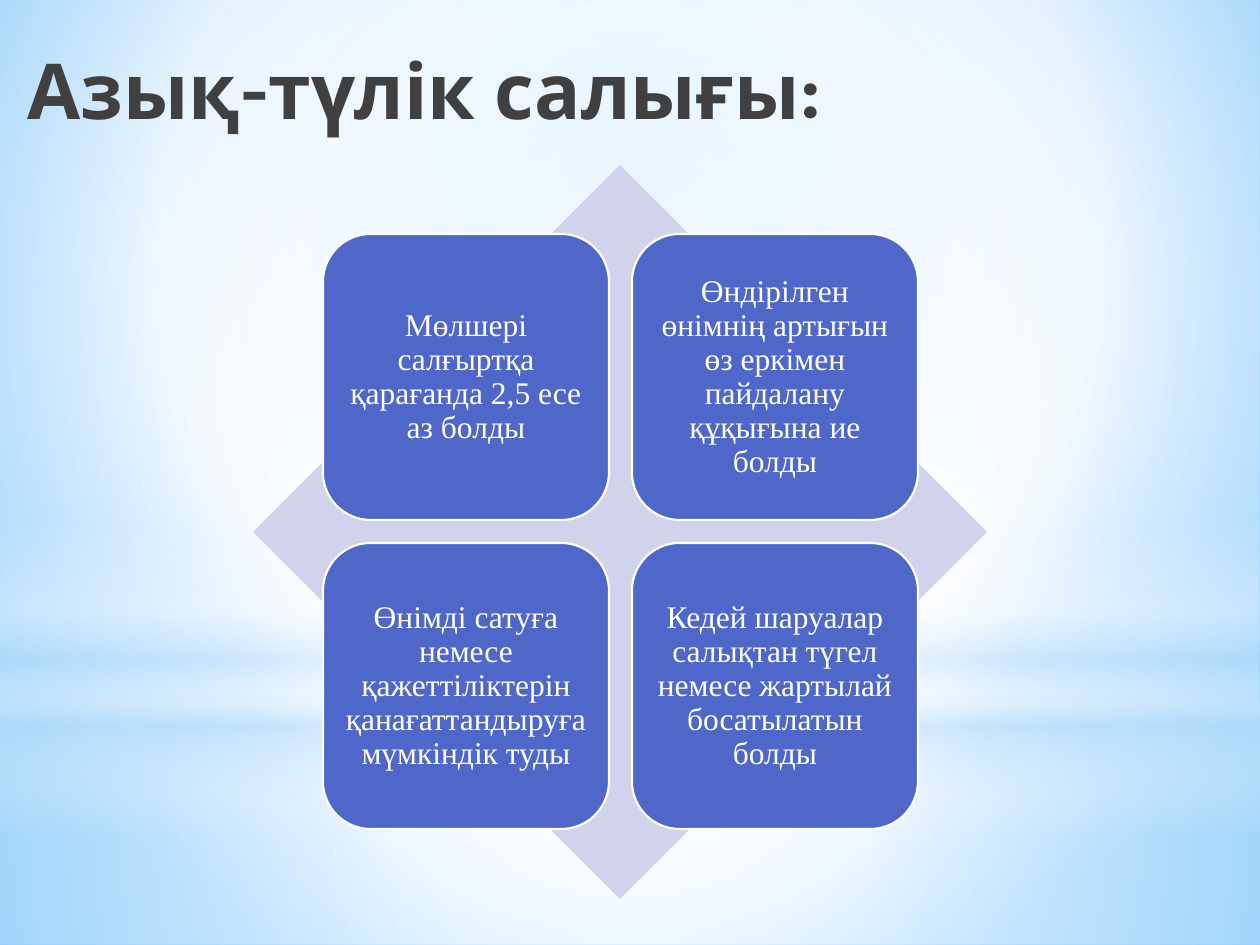
from dataclasses import dataclass

from lxml import etree
from pptx import Presentation
from pptx.dml.color import RGBColor
from pptx.enum.shapes import MSO_SHAPE
from pptx.enum.text import MSO_ANCHOR, MSO_AUTO_SIZE, PP_ALIGN
from pptx.oxml.ns import qn
from pptx.util import Emu, Pt

RECT, OVAL = MSO_SHAPE.RECTANGLE, MSO_SHAPE.OVAL
GEM, ROUND = MSO_SHAPE.DIAMOND, MSO_SHAPE.ROUNDED_RECTANGLE
TOP, MID = MSO_ANCHOR.TOP, MSO_ANCHOR.MIDDLE
LEFT, MIDST = PP_ALIGN.LEFT, PP_ALIGN.CENTER
FIXED = MSO_AUTO_SIZE.NONE
PX = 914400 / 126


@dataclass(frozen=True)
class Theme:
    white: str = "FFFFFF"
    pale: str = "B4DCFA"
    sky: str = "9ED5FF"
    deep: str = "5BB9FF"
    gem: str = "D0D3EB"
    card: str = "4E67C8"
    ink: str = "404040"
    head: str = "Karla"
    body: str = "Times New Roman"
    big: int = 44
    small: int = 18
    edge: float = 1.25


look = Theme()


def blend(fill, host, stops, focus):
    fill.background()
    old = host.find(".//" + qn("a:noFill"))
    grad = etree.Element(qn("a:gradFill"), rotWithShape="1")
    row = etree.SubElement(grad, qn("a:gsLst"))
    for pos, tone, alpha in stops:
        stop = etree.SubElement(row, qn("a:gs"), pos=str(pos * 1000))
        color = etree.SubElement(stop, qn("a:srgbClr"), val=tone)
        if alpha < 100:
            etree.SubElement(color, qn("a:alpha"), val=str(alpha * 1000))
    if focus:
        ring = etree.SubElement(grad, qn("a:path"), path="circle")
        sides = {side: str(part * 1000) for side, part in zip("ltrb", focus)}
        etree.SubElement(ring, qn("a:fillToRect"), sides)
    else:
        etree.SubElement(grad, qn("a:lin"), ang="5400000", scaled="0")
    old.getparent().replace(old, grad)


def write(shape, text, frame, para, font, tone):
    box = shape.text_frame
    box.text = text
    line = box.paragraphs[0]
    face = line.runs[0].font
    for part, form in ((box, frame), (line, para), (face, font)):
        for name, value in form.items():
            setattr(part, name, value)
    face.color.rgb = RGBColor.from_string(tone)


deck = Presentation()
deck.slide_width, deck.slide_height = Emu(round(1260 * PX)), Emu(round(945 * PX))
slide = deck.slides.add_slide(deck.slide_layouts[5])
shapes = slide.shapes
blend(
    slide.background.fill,
    slide.element,
    [(0, look.sky, 100), (60, look.white, 100), (100, look.deep, 100)],
    (20, 10, 20, 60),
)

core = (50, 50, 50, 50)
glows = [
    (RECT, 703, 242, core,
     [(0, look.white, 91), (37, look.white, 76), (100, look.pale, 79)]),
    (RECT, 0, 703, core,
     [(0, look.white, 89), (48, look.white, 62), (100, look.pale, 79)]),
    (RECT, 519, 315, None,
     [(0, look.white, 0), (29, look.white, 30), (45, look.pale, 40),
      (55, look.white, 26), (65, look.pale, 60), (100, look.white, 0)]),
    (OVAL, 220, 703, core, [(0, look.white, 100), (56, look.white, 0)]),
]
for kind, top, high, focus, stops in glows:
    glow = shapes.add_shape(kind, *(round(n * PX) for n in (0, top, 1260, high)))
    glow.shadow.inherit = False
    blend(glow.fill, glow.element, stops, focus)
    glow.line.fill.background()

title = shapes.title
title.element.getparent().append(title.element)
for name, size in {"left": 15, "top": 36, "width": 1230, "height": 158}.items():
    setattr(title, name, round(size * PX))
write(
    title,
    "Азық-түлік салығы:",
    {"word_wrap": True, "auto_size": FIXED, "vertical_anchor": TOP},
    {"alignment": LEFT},
    {"name": look.head, "size": Pt(look.big), "bold": True},
    look.ink,
)

gem = shapes.add_shape(GEM, *(round(n * PX) for n in (253, 165, 734, 734)))
gem.shadow.inherit = False
gem.fill.solid()
gem.fill.fore_color.rgb = RGBColor.from_string(look.gem)
gem.line.fill.background()

side, step = 286, 309
inset = Emu(round(9 * PX))
frame = {"word_wrap": True, "auto_size": FIXED, "vertical_anchor": MID}
for edge in ("left", "top", "right", "bottom"):
    frame["margin_" + edge] = inset
para = {"alignment": MIDST, "line_spacing": 0.9}
font = {"name": look.body, "size": Pt(look.small)}
facts = [
    "Мөлшері салғыртқа қарағанда 2,5 есе аз болды",
    "Өндірілген өнімнің артығын өз еркімен пайдалану құқығына ие болды",
    "Өнімді сатуға немесе қажеттіліктерін қанағаттандыруға мүмкіндік туды",
    "Кедей шаруалар салықтан түгел немесе жартылай босатылатын болды",
]
for spot, fact in enumerate(facts):
    row, col = divmod(spot, 2)
    place = (323 + col * step, 234 + row * step, side, side)
    card = shapes.add_shape(ROUND, *(round(n * PX) for n in place))
    card.shadow.inherit = False
    card.fill.solid()
    card.fill.fore_color.rgb = RGBColor.from_string(look.card)
    card.line.color.rgb = RGBColor.from_string(look.white)
    card.line.width = Pt(look.edge)
    write(card, fact, frame, para, font, look.white)

deck.save("out.pptx")
